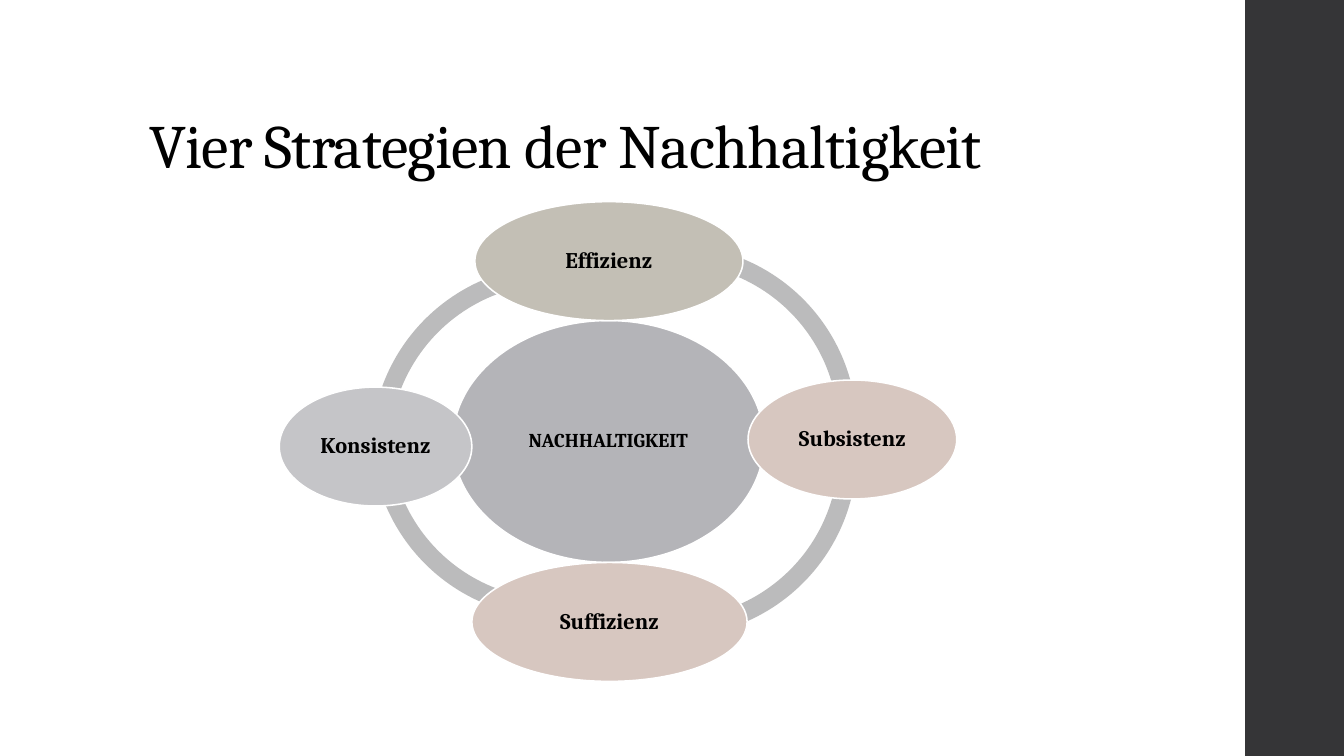
from dataclasses import dataclass

from pptx import Presentation
from pptx import util as u
from pptx.dml.color import RGBColor
from pptx.enum import shapes, text

FONT = "Cambria"
WIDE, HIGH = u.Inches(13.33), u.Inches(7.5)
ARC_W, ARC_H = 27.46, 48.8
NODE_H = 15.73


@dataclass
class Box:
    """Place and size in percent of the slide's width and height."""
    left: float
    top: float
    width: float
    height: float

    def emu(self) -> tuple[int, int, int, int]:
        return (int(WIDE * self.left / 100), int(HIGH * self.top / 100),
                int(WIDE * self.width / 100), int(HIGH * self.height / 100))


@dataclass
class Arc:
    left: float
    top: float
    start: float
    end: float


@dataclass
class Node:
    label: str
    box: Box
    fill: str
    size: int = 16


ARCS = [
    Arc(27.61, 32.93, 105.47, 172.35),
    Arc(27.61, 35.07, 186, 252),
    Arc(36.31, 35.47, 2, 66.42),
    Arc(36.31, 32.4, 292, 1.88),
]
NODES = [
    Node("NACHHALTIGKEIT", Box(33.68, 42.4, 23.18, 32), "B4B4B8", 14),
    Node("Effizienz", Box(35.33, 26.67, 19.95, NODE_H), "C3BFB5"),
    Node("Subsistenz", Box(55.66, 50.27, 15.53, NODE_H), "D7C7C0"),
    Node("Suffizienz", Box(35.11, 74.4, 20.48, NODE_H), "D7C7C0"),
    Node("Konsistenz", Box(20.78, 51.2, 14.33, NODE_H), "C5C5C8"),
]


def color(code: str) -> RGBColor:
    return RGBColor.from_string(code)


def style(para, size: int, bold: bool, align) -> None:
    para.alignment = align
    para.line_spacing = 0.9
    font = para.font
    font.name, font.size, font.bold = FONT, u.Pt(size), bold
    font.color.rgb = color("000000")


def draw(slide, kind, box: Box, fill: str):
    shape = slide.shapes.add_shape(kind, *box.emu())
    shape.shadow.inherit = False
    shape.fill.solid()
    shape.fill.fore_color.rgb = color(fill)
    shape.line.fill.background()
    return shape


def draw_arc(slide, arc: Arc) -> None:
    box = Box(arc.left, arc.top, ARC_W, ARC_H)
    shape = draw(slide, shapes.MSO_SHAPE.BLOCK_ARC, box, "BBBBBC")
    # Angles are stored in 60000ths of a degree, scaled by 100000
    shape.adjustments[0] = arc.start * 0.6
    shape.adjustments[1] = arc.end * 0.6
    shape.adjustments[2] = 0.05


def draw_node(slide, node: Node) -> None:
    shape = draw(slide, shapes.MSO_SHAPE.OVAL, node.box, node.fill)
    shape.line.color.rgb = color("FFFFFF")
    shape.line.width = u.Pt(1.1)
    frame = shape.text_frame
    frame.word_wrap = True
    frame.vertical_anchor = text.MSO_ANCHOR.MIDDLE
    frame.margin_left = frame.margin_right = u.Inches(0.02)
    frame.margin_top = frame.margin_bottom = u.Inches(0.02)
    frame.text = node.label
    style(frame.paragraphs[0], node.size, True, text.PP_ALIGN.CENTER)


def draw_title(slide, label: str) -> None:
    title = slide.shapes.title
    box = Box(10.35, 5.33, 79.52, 19.33)
    title.left, title.top, title.width, title.height = box.emu()
    frame = title.text_frame
    frame.text = label
    frame.word_wrap = True
    frame.auto_size = text.MSO_AUTO_SIZE.NONE
    frame.vertical_anchor = text.MSO_ANCHOR.BOTTOM
    para = frame.paragraphs[0]
    style(para, 44, False, text.PP_ALIGN.LEFT)
    # Tighten the letters by half a point
    para.runs[0].font._element.set("spc", "-50")


def main() -> None:
    deck = Presentation()
    deck.slide_width, deck.slide_height = WIDE, HIGH
    slide = deck.slides.add_slide(deck.slide_layouts[5])

    # Side bar and title
    draw(slide, shapes.MSO_SHAPE.RECTANGLE, Box(92.65, 0, 7.35, 100), "353537")
    draw_title(slide, "Vier Strategien der Nachhaltigkeit")

    # Ring behind the hub and its four strategies
    for arc in ARCS:
        draw_arc(slide, arc)
    for node in NODES:
        draw_node(slide, node)

    deck.save("out.pptx")


if __name__ == "__main__":
    main()
